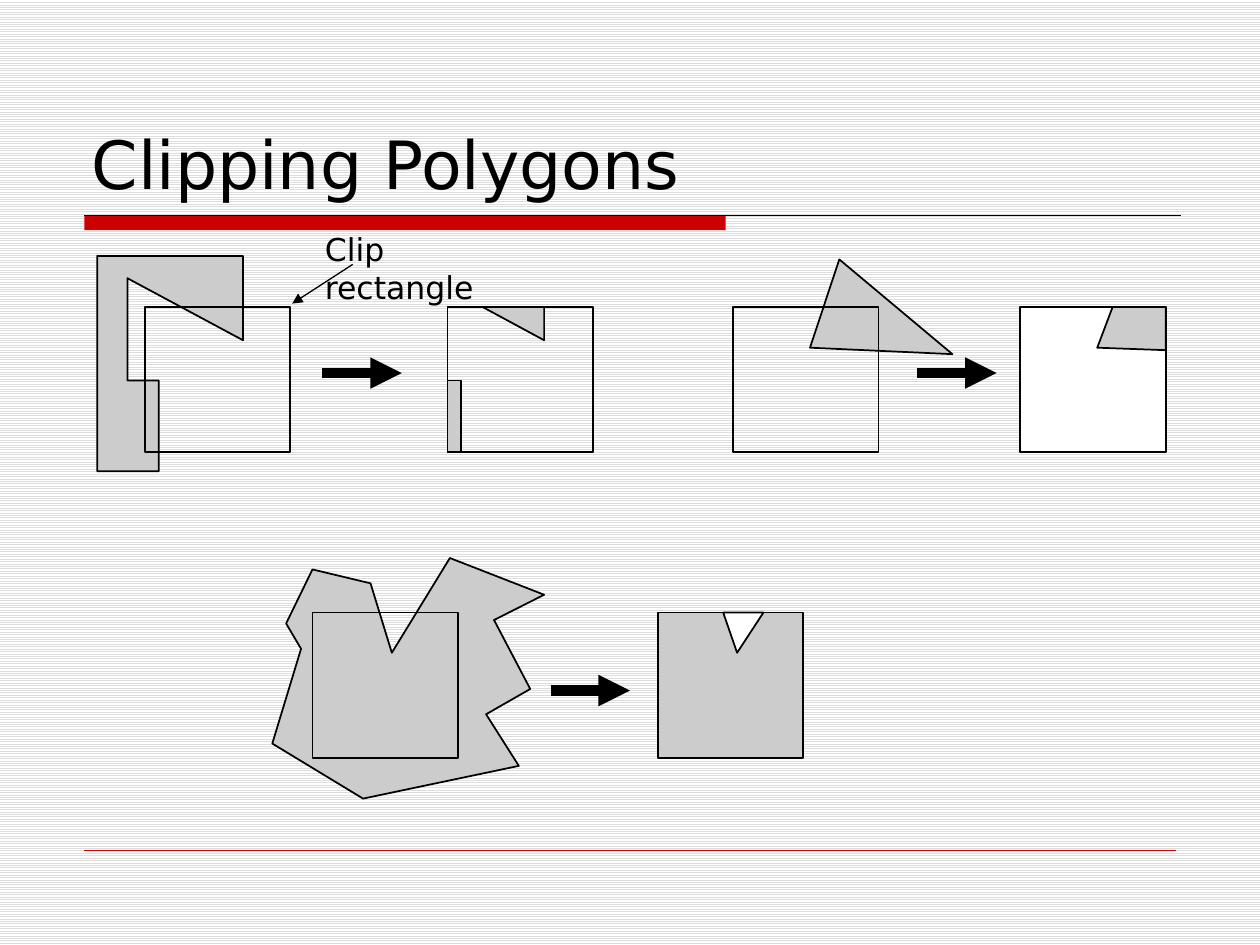
from lxml.etree import SubElement
from pptx import Presentation
from pptx.dml.color import RGBColor
from pptx.enum.dml import MSO_PATTERN
from pptx.enum.shapes import MSO_CONNECTOR, MSO_SHAPE
from pptx.enum.text import MSO_ANCHOR
from pptx.oxml.ns import qn
from pptx.util import Cm, Pt

COLORS = {"black": "000000", "white": "FFFFFF", "gray": "CCCCCC",
          "red": "CC0000", "stripe": "DDDDDD"}
RGB = {name: RGBColor.from_string(value) for name, value in COLORS.items()}

deck = Presentation()
deck.slide_width, deck.slide_height = Cm(25.4), Cm(19.05)
page = deck.slides.add_slide(deck.slide_layouts[6])
shapes = page.shapes


def add_text(text, left, top, width, height, size=18, anchor=MSO_ANCHOR.TOP):
    box = shapes.add_textbox(Cm(left), Cm(top), Cm(width), Cm(height))
    frame = box.text_frame
    frame.word_wrap = True
    frame.vertical_anchor = anchor
    span = frame.paragraphs[0].add_run()
    span.text = text
    span.font.name = "DejaVu Sans"
    span.font.size = Pt(size)
    span.font.color.rgb = RGB["black"]


def set_format(shape, fill, line="black"):
    shape.shadow.inherit = False
    if fill:
        shape.fill.solid()
        shape.fill.fore_color.rgb = RGB[fill]
    else:
        shape.fill.background()
    if line:
        shape.line.color.rgb = RGB[line]
        shape.line.width = Pt(1)
    else:
        shape.line.fill.background()


# Striped background
background = page.background.fill
background.patterned()
background.pattern = MSO_PATTERN.LIGHT_HORIZONTAL
background.fore_color.rgb = RGB["stripe"]
background.back_color.rgb = RGB["white"]

# Title and red bar
bar = shapes.add_shape(MSO_SHAPE.RECTANGLE, Cm(1.7), Cm(4.34), Cm(12.93), Cm(0.3))
set_format(bar, "red", line=None)
add_text("Clipping Polygons", 1.6, 0.84, 22.23, 3.38, size=38,
         anchor=MSO_ANCHOR.BOTTOM)

# Polygons: subjects lie under the squares, clipped results over them
subjects = [
    ("gray", [(16.33, 7.01), (16.92, 5.23), (19.2, 7.14)]),
    ("gray", [(2.57, 5.61), (2.57, 7.67), (3.2, 7.67), (3.2, 9.5),
              (1.96, 9.5), (1.96, 5.16), (4.9, 5.16), (4.9, 6.86)]),
    ("gray", [(6.3, 11.48), (7.47, 11.76), (7.9, 13.16), (9.07, 11.25),
              (10.97, 11.99), (9.96, 12.5), (10.69, 13.89), (9.8, 14.4),
              (10.46, 15.44), (7.32, 16.1), (5.49, 14.99), (6.07, 13.08),
              (5.77, 12.57)]),
]
SIDE, UPPER, LOWER = 2.93, 6.19, 12.35
rectangles = [
    (2.92, UPPER, SIDE, SIDE, None),
    (9.02, UPPER, SIDE, SIDE, None),
    (14.78, UPPER, SIDE, SIDE, None),
    (20.57, UPPER, SIDE, SIDE, "white"),
    (6.3, LOWER, SIDE, SIDE, None),
    (13.26, LOWER, SIDE, SIDE, "gray"),
    (9.02, 7.67, 0.28, 1.45, "gray"),
]
results = [
    ("gray", [(9.73, UPPER), (10.97, UPPER), (10.97, 6.86)]),
    ("gray", [(23.5, 7.06), (23.5, UPPER), (22.43, UPPER), (22.12, 7.01)]),
    ("white", [(14.58, LOWER), (15.39, LOWER), (14.86, 13.16)]),
]
for layer, polygons in enumerate((subjects, results)):
    for fill, points in polygons:
        corners = [(Cm(x), Cm(y)) for x, y in points]
        builder = shapes.build_freeform(*corners[0])
        builder.add_line_segments(corners[1:], close=True)
        set_format(builder.convert_to_shape(), fill)
    if layer == 0:
        for left, top, width, height, fill in rectangles:
            rectangle = shapes.add_shape(MSO_SHAPE.RECTANGLE, Cm(left), Cm(top),
                                         Cm(width), Cm(height))
            set_format(rectangle, fill)

add_text("Clip rectangle", 6.3, 4.52, 4.8, 1.02)

# Rules and arrows: x1, y1, x2, y2, color, width, arrowhead
lines = [
    (1.7, 4.34, 23.8, 4.34, "black", 0.75, False),
    (1.7, 17.15, 23.7, 17.15, "red", 0.25, False),
    (7.11, 5.33, 5.89, 6.12, "black", 0.75, True),
]
for x, y in [(6.5, 7.52), (18.49, 7.52), (11.1, 13.92)]:
    lines.append((x, y, x + 1.6, y, "black", 6, True))
for x1, y1, x2, y2, color, width, has_head in lines:
    line = shapes.add_connector(MSO_CONNECTOR.STRAIGHT, Cm(x1), Cm(y1), Cm(x2), Cm(y2))
    line.line.color.rgb = RGB[color]
    line.line.width = Pt(width)
    if has_head:
        SubElement(line.line._get_or_add_ln(), qn("a:tailEnd"), type="triangle")
    SubElement(line._element.spPr, qn("a:effectLst"))

deck.save("out.pptx")
